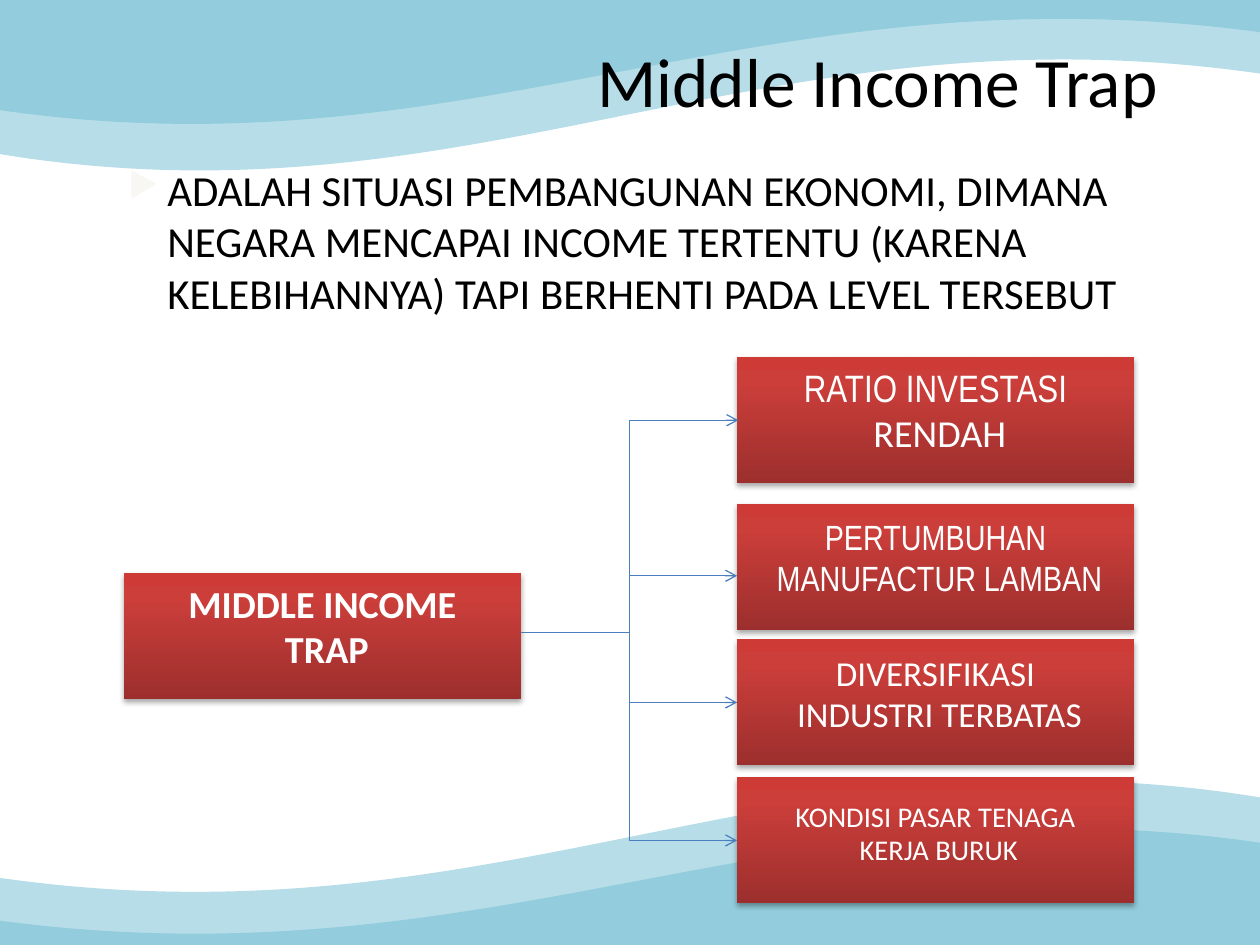
import pptx
import pptx.util
import pptx.dml.color
import pptx.enum.shapes
import pptx.enum.text
import pptx.oxml.ns
from dataclasses import dataclass
from lxml import etree

Pt = pptx.util.Pt
PP_ALIGN = pptx.enum.text.PP_ALIGN
ANCHOR = pptx.enum.text.MSO_ANCHOR
CONNECTOR = pptx.enum.shapes.MSO_CONNECTOR
qn = pptx.oxml.ns.qn


@dataclass(frozen=True)
class Theme:
    font: str = "Calibri"
    narrow: str = "Arial Narrow"
    ink: str = "000000"
    white: str = "FFFFFF"
    bullet: str = "F8F7F3"
    light_wave: str = "B7DEE8"
    dark_wave: str = "93CDDD"
    line: str = "4B7EBC"
    box_stops: tuple = ((0, "9C2F2D"), (80, "CB3E3A"), (100, "CE3B37"))
    title: float = 39.6
    body: float = 24.5
    large: float = 21.8
    medium: float = 20
    small: float = 16.3


T = Theme()
COLS = 100  # square grid cells across the slide, 75 down

prs = pptx.Presentation()
prs.slide_width, prs.slide_height = pptx.util.Inches(10), pptx.util.Inches(7.5)
CELL = prs.slide_width / COLS


def grid(*cells):
    """Convert grid cells to slide lengths."""
    return [round(c * CELL) for c in cells]


def rgb(value):
    return pptx.dml.color.RGBColor.from_string(value)


def child(parent, tag, **attrs):
    return etree.SubElement(parent, qn(tag), {k: str(v) for k, v in attrs.items()})


def add_run(p, text, size, color, font=T.font, bold=False):
    r = p.add_run()
    r.text = text
    r.font.name, r.font.size, r.font.bold = font, Pt(size), bold
    r.font.color.rgb = rgb(color)


# Waves: a start point, then line points (2 numbers) or cubic curves (6)
LIGHT_WAVE = [(35.8, -.3), (60.9, -.3, 90, -.2, 100.4, 0), (100.4, 5.9),
              (60.3, 0, 37.8, 18.5, -.2, 12.2), (-.4, -.1),
              (6.5, -.2, 20.4, -.3, 35.8, -.3)]
DARK_WAVE = [(15.5, -.5), (100, -.1), (100, .6, 100.3, 1.9, 100.3, 2.6),
             (60.2, -2.9, 37.7, 14.3, -.3, 8.7), (-.3, -.1), (15.5, -.5)]


def add_wave(s, outline, height, color):
    anchors = [tuple(grid(*seg[-2:])) for seg in outline]
    builder = s.shapes.build_freeform(*anchors[0])
    builder.add_line_segments(anchors[1:], close=True)
    sp = builder.convert_to_shape()
    # Bend the curved segments
    path = sp._element.spPr.find(".//" + qn("a:path"))
    for seg, node in zip(outline[1:], path.findall(qn("a:lnTo"))):
        if len(seg) == 6:
            curve = etree.Element(qn("a:cubicBezTo"))
            for x, y in zip(grid(*seg[::2]), grid(*seg[1::2])):
                child(curve, "a:pt", x=x - sp.left, y=y - sp.top)
            path.replace(node, curve)
    sp.height, = grid(height)
    path.set("h", str(sp.height))
    sp.shadow.inherit = False
    sp.fill.solid()
    sp.fill.fore_color.rgb = rgb(color)
    sp.line.fill.background()
    return sp


def add_waves(s, turned_tops=None):
    """Top waves, or the same pair turned half round at the given tops."""
    waves = [add_wave(s, LIGHT_WAVE, 13.8, T.light_wave),
             add_wave(s, DARK_WAVE, 10.4, T.dark_wave)]
    for sp, top in zip(waves, turned_tops or ()):
        sp.left, sp.top = grid(-.5, top)
        sp.rotation = 180


def add_title(s, box, text):
    sp = s.shapes.title
    sp.left, sp.top, sp.width, sp.height = grid(*box)
    s.shapes._spTree.append(sp._element)  # in front of the waves
    tf = sp.text_frame
    tf.vertical_anchor = ANCHOR.MIDDLE
    p = tf.paragraphs[0]
    p.alignment = PP_ALIGN.RIGHT
    add_run(p, text, T.title, T.ink)


def add_definition(s, box, text):
    tf = s.shapes.add_textbox(*grid(*box)).text_frame
    tf.word_wrap = True
    p = tf.paragraphs[0]
    pPr = p._p.get_or_add_pPr()
    indent, hang = grid(8.1, -3.1)
    pPr.set("marL", str(indent))
    pPr.set("indent", str(hang))
    child(child(pPr, "a:buClr"), "a:srgbClr", val=T.bullet)
    child(pPr, "a:buSzPct", val=80000)
    child(pPr, "a:buChar", char="▶")
    add_run(p, text, T.body, T.ink)


def add_red_box(s, box, lines, size, bold=False):
    sp = s.shapes.add_shape(pptx.enum.shapes.MSO_SHAPE.RECTANGLE, *grid(*box))
    sp.line.fill.background()
    # Gradient, dark at the bottom
    sp.fill.gradient()
    sp.fill.gradient_angle = 90
    spPr = sp._element.spPr
    stops = spPr.find(".//" + qn("a:gsLst"))
    for old in list(stops):
        stops.remove(old)
    for pos, color in T.box_stops:
        child(child(stops, "a:gs", pos=pos * 1000), "a:srgbClr", val=color)
    # Soft shadow below
    sp.shadow.inherit = False
    shadow = child(spPr.find(qn("a:effectLst")), "a:outerShdw", blurRad=Pt(3.1),
                   dist=Pt(1.8), dir=5400000, rotWithShape=0)
    child(child(shadow, "a:srgbClr", val="000000"), "a:alpha", val=35000)
    # Text sits a little above the middle
    tf = sp.text_frame
    tf.word_wrap = True
    tf.vertical_anchor = ANCHOR.MIDDLE
    tf.margin_bottom = Pt(4.8 + .46 * size)
    for i, (text, font) in enumerate(lines):
        p = tf.add_paragraph() if i else tf.paragraphs[0]
        p.alignment = PP_ALIGN.CENTER
        p.line_spacing = Pt(1.17 * size)
        add_run(p, text, size, T.white, font, bold)
    return sp


def add_line(s, start, end, kind=CONNECTOR.STRAIGHT, arrows=()):
    c = s.shapes.add_connector(kind, *grid(*start, *end))
    c.line.color.rgb = rgb(T.line)
    c.line.width = Pt(.75)
    for tag in arrows:
        child(c.line._get_or_add_ln(), tag, type="arrow")
    child(c._element.spPr, "a:effectLst")
    return c


def add_cause_tree(s, box, root, causes):
    """Root box on the left, its causes stacked on the right."""
    left, top, width, _ = box
    w, h = 31.5, 10
    x = left + width - w
    tops = [top + dy for dy in (0, 11.65, 22.4, 33.35)]
    boxes = [add_red_box(s, (x, y, w, h), *cause) for y, cause in zip(tops, causes)]
    add_red_box(s, (left, top + 17.15, w, h), *root, bold=True)

    # Bracket joining the first and last causes
    spine, offset = x - 8.7, .1
    bracket = add_line(s, (x + offset, tops[0] + h / 2), (x, tops[3] + h / 2),
                       CONNECTOR.ELBOW, ("a:headEnd", "a:tailEnd"))
    guides = bracket._element.spPr.find(".//" + qn("a:avLst"))
    reach = round((x + offset - spine) / offset * 100000)
    child(guides, "a:gd", name="adj1", fmla=f"val {reach}")

    # Inner arrows and the trunk
    add_line(s, (spine + .2, 45.7), (x, 45.7), arrows=("a:tailEnd",))
    y = tops[2] + h / 2
    add_line(s, (spine + .2, y), (x, y), arrows=("a:tailEnd",)).end_connect(boxes[2], 1)
    add_line(s, (left + w, 50.2), (spine + .1, 50.2))


s = prs.slides.add_slide(prs.slide_layouts[5])
add_waves(s, turned_tops=(62, 65.7))
add_waves(s)
add_title(s, (27.5, 2.7, 65.4, 7.3), "Middle Income Trap")
add_definition(s, (4.2, 12.5, 91.7, 15.3),
               "ADALAH SITUASI PEMBANGUNAN EKONOMI, DIMANA NEGARA MENCAPAI INCOME "
               "TERTENTU (KARENA KELEBIHANNYA) TAPI BERHENTI PADA LEVEL TERSEBUT")
add_cause_tree(
    s, (9.85, 28.35, 80.15, 43.35),
    ([("MIDDLE INCOME", T.font), (" TRAP", T.font)], T.large),
    [([("RATIO INVESTASI", T.narrow), (" RENDAH", T.font)], T.large),
     ([("PERTUMBUHAN", T.narrow), (" MANUFACTUR LAMBAN", T.narrow)], T.medium),
     ([("DIVERSIFIKASI", T.font), (" INDUSTRI TERBATAS", T.font)], T.medium),
     ([("KONDISI PASAR TENAGA", T.font), (" KERJA BURUK", T.font)], T.small)])
prs.save("out.pptx")
